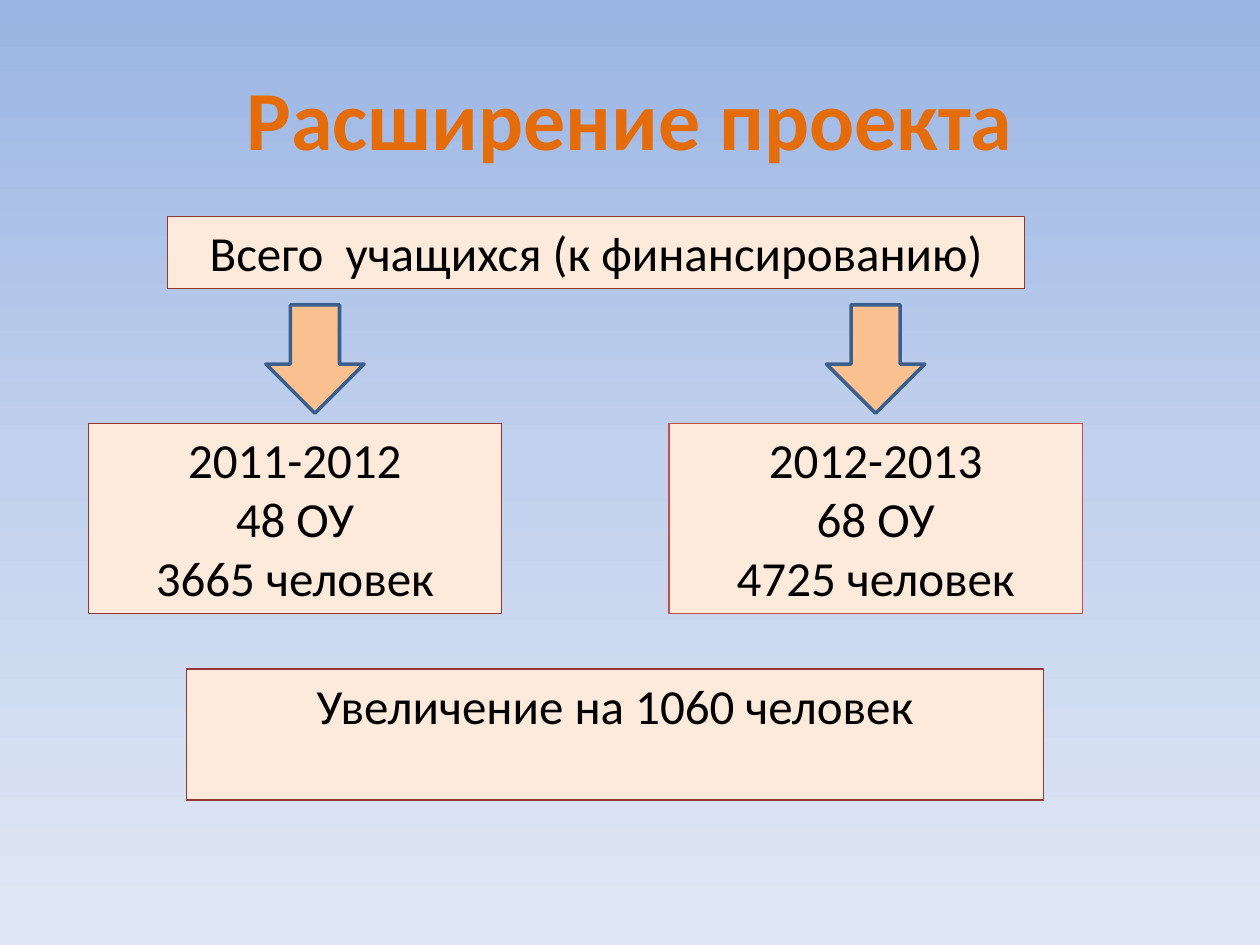
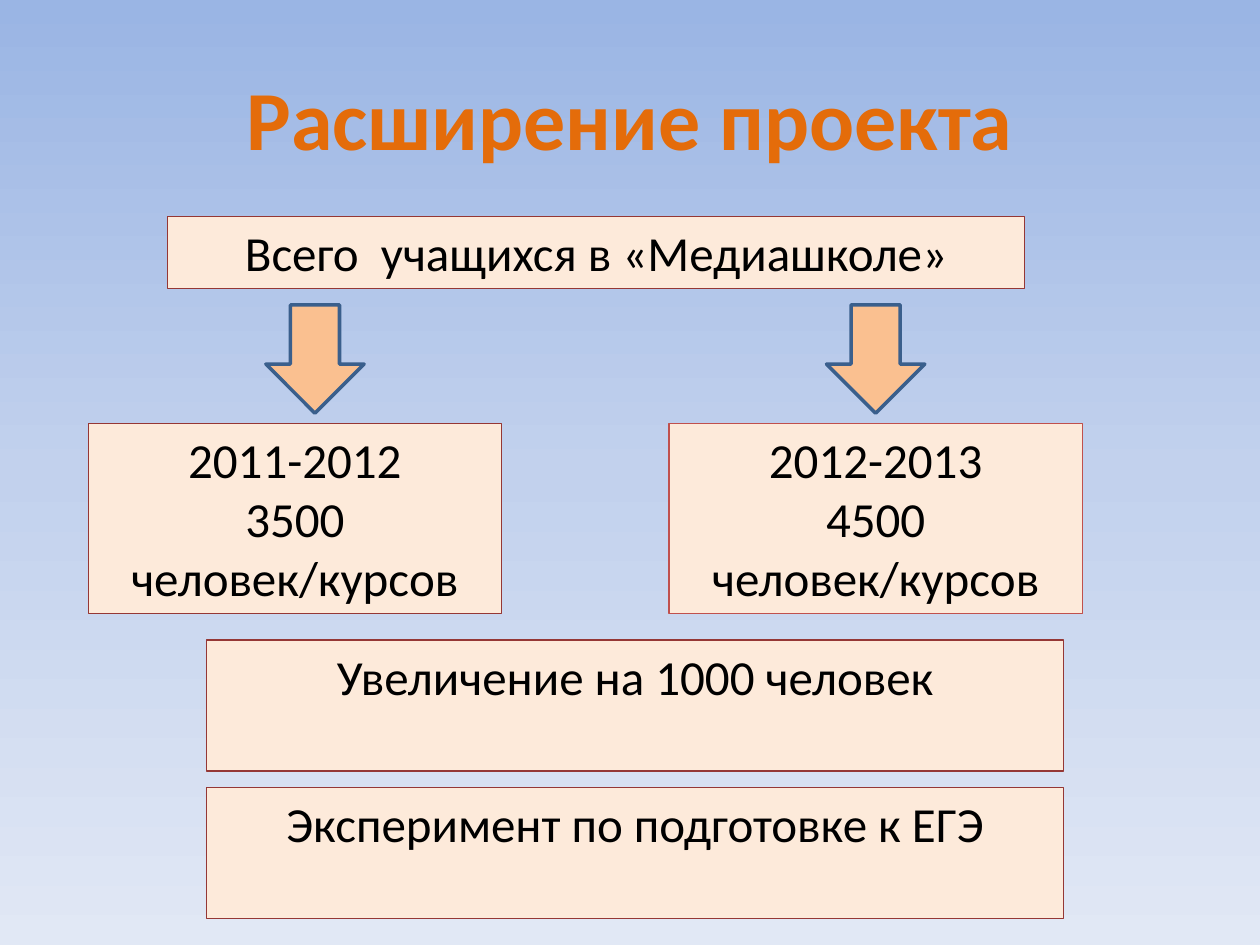
from copy import deepcopy

from pptx import Presentation
from pptx.dml.color import RGBColor as Rgb
from pptx.enum.shapes import MSO_SHAPE as Shape
from pptx.enum.text import MSO_ANCHOR as Anchor, PP_ALIGN as Align
from pptx.oxml.ns import qn
from pptx.util import Inches, Pt

WIDTH, HEIGHT = Inches(10), Inches(7.5)
COLS, ROWS = 100, 75
FONT = "Calibri"

ORANGE = Rgb(0xE4, 0x6C, 0x0A)
CREAM = Rgb(0xFD, 0xEA, 0xDA)
PEACH = Rgb(0xFA, 0xC0, 0x90)
MAROON = Rgb(0x95, 0x37, 0x35)
RED = Rgb(0xC0, 0x50, 0x4D)
BLUE = Rgb(0x3A, 0x5F, 0x8C)
BLACK = Rgb(0, 0, 0)
SKY = (Rgb(0x9A, 0xB5, 0xE4), Rgb(0xC2, 0xD1, 0xED), Rgb(0xE1, 0xE8, 0xF5))

TITLE = "Расширение проекта"
BAR_W, BAR_H = 68, 10.4
YEAR_X, YEAR_STEP = 7, 46.1
ARROW_X, ARROW_STEP = 21.1, 44.5


def cells(col, row, wide, high):
    """Turn grid columns and rows into left, top, width and height."""
    return (int(WIDTH * col / COLS), int(HEIGHT * row / ROWS),
            int(WIDTH * wide / COLS), int(HEIGHT * high / ROWS))


def write(shape, text, size, color, anchor, bold=False):
    frame = shape.text_frame
    frame.word_wrap = True
    frame.vertical_anchor = anchor
    frame.text = text
    for para in frame.paragraphs:
        para.alignment = Align.CENTER
        for run in para.runs:
            font = run.font
            font.name, font.size, font.bold = FONT, Pt(size), bold
            font.color.rgb = color


def paint_sky(slide):
    """Fill the background from top to bottom with evenly spaced colours."""
    fill = slide.background.fill
    fill.gradient()
    fill.gradient_angle = 270
    stops = slide._element.find(".//" + qn("a:gsLst"))
    stops.insert(1, deepcopy(stops[0]))
    for i, (stop, color) in enumerate(zip(fill.gradient_stops, SKY)):
        stop.position = i / (len(SKY) - 1)
        stop.color.rgb = color


def add_title(slide):
    box = slide.shapes.add_textbox(*cells(5, 3, 90, 12.5))
    write(box, TITLE, 48, ORANGE, Anchor.MIDDLE, bold=True)


def add_form(slide, kind, area, fill, line, weight):
    form = slide.shapes.add_shape(kind, *cells(*area))
    form.shadow.inherit = False
    form.fill.solid()
    form.fill.fore_color.rgb = fill
    form.line.color.rgb = line
    form.line.width = Pt(weight)
    return form


def add_box(slide, text, area, line=MAROON):
    box = add_form(slide, Shape.RECTANGLE, area, CREAM, line, 0.75)
    write(box, text, 28, BLACK, Anchor.TOP)


def add_growth(slide, head, years, notes, left, tops):
    """Draw the head bar, an arrow to each year, and the notes below."""
    add_box(slide, head, (13.3, 17.2, BAR_W, 5.7))
    for i, (text, line) in enumerate(zip(years, (MAROON, RED))):
        add_box(slide, text, (YEAR_X + i * YEAR_STEP, 33.6, 32.8, 15.1), line)
        add_form(slide, Shape.DOWN_ARROW,
                 (ARROW_X + i * ARROW_STEP, 24.2, 7.8, 8.6), PEACH, BLUE, 2)
    for note, top in zip(notes, tops):
        add_box(slide, note, (left, top, BAR_W, BAR_H))


def add_page(deck, *growth):
    slide = deck.slides.add_slide(deck.slide_layouts[6])
    paint_sky(slide)
    add_title(slide)
    add_growth(slide, *growth)


def main():
    deck = Presentation()
    deck.slide_width, deck.slide_height = WIDTH, HEIGHT
    add_page(deck, "Всего  учащихся (к финансированию)",
             ("2011-2012\n48 ОУ\n3665 человек",
              "2012-2013\n68 ОУ\n4725 человек"),
             ("Увеличение на 1060 человек",), 14.8, (53.1,))
    add_page(deck, "Всего  учащихся в «Медиашколе»",
             ("2011-2012\n3500 человек/курсов",
              "2012-2013\n4500 человек/курсов"),
             ("Увеличение на 1000 человек", "Эксперимент по подготовке к ЕГЭ"),
             16.4, (50.8, 62.5))
    deck.save("out.pptx")


if __name__ == "__main__":
    main()
